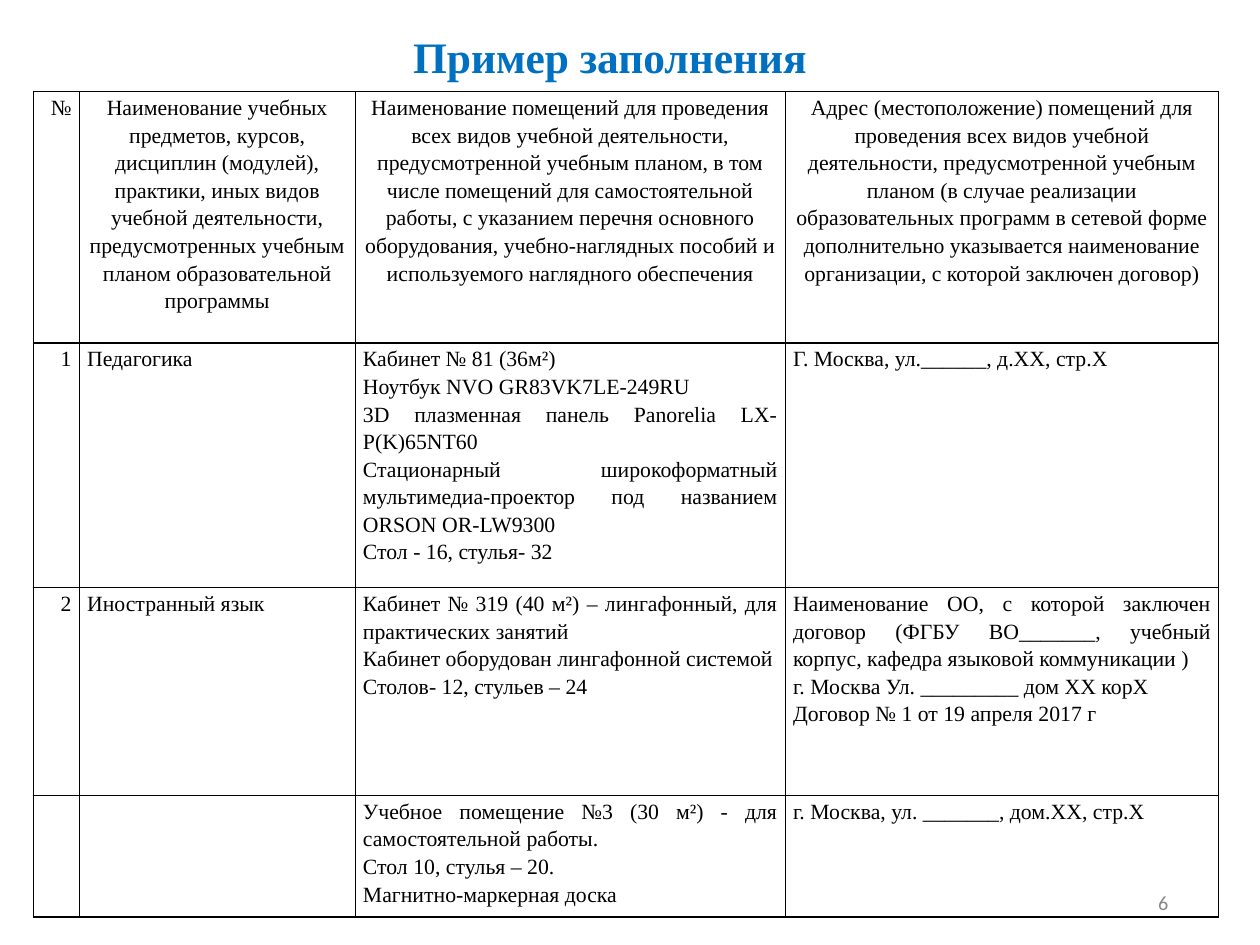
from dataclasses import dataclass
from lxml.etree import SubElement
from pptx import Presentation
from pptx.dml.color import RGBColor as RGB
from pptx.enum.text import MSO_ANCHOR as Anchor, PP_ALIGN as Align
from pptx.oxml.ns import qn
from pptx.util import Inches, Pt


@dataclass(frozen=True)
class Theme:
    serif: str = "Times New Roman"
    sans: str = "Calibri"
    blue: str = "0070C0"
    black: str = "000000"
    gray: str = "888888"
    head: int = 28
    body: int = 14
    small: int = 13
    line: int = 1


HEADS = [
    "№",
    "Наименование учебных предметов, курсов, дисциплин (модулей), практики, "
    "иных видов учебной деятельности, предусмотренных учебным планом "
    "образовательной программы",
    "Наименование помещений для проведения всех видов учебной деятельности, "
    "предусмотренной учебным планом, в том числе помещений для самостоятельной "
    "работы, с указанием перечня основного оборудования, учебно-наглядных "
    "пособий и используемого наглядного обеспечения",
    "Адрес (местоположение) помещений для проведения всех видов учебной "
    "деятельности, предусмотренной учебным планом (в случае реализации "
    "образовательных программ в сетевой форме дополнительно указывается "
    "наименование организации, с которой заключен договор)",
]
ROOMS = [
    ["1", "Педагогика",
     "Кабинет № 81 (36м²)\n"
     "Ноутбук NVO GR83VK7LE-249RU\n"
     "3D плазменная панель Panorelia LX-P(K)65NT60\n"
     "Стационарный широкоформатный мультимедиа-проектор под названием "
     "ORSON OR-LW9300\n"
     "Стол - 16, стулья- 32",
     "Г. Москва, ул.______, д.ХХ, стр.Х"],
    ["2", "Иностранный язык",
     "Кабинет № 319 (40 м²) – лингафонный, для практических занятий\n"
     "Кабинет оборудован лингафонной системой\n"
     "Столов- 12, стульев – 24",
     "Наименование ОО, с которой заключен договор (ФГБУ ВО_______, учебный "
     "корпус, кафедра языковой коммуникации )\n"
     "г. Москва Ул. _________ дом ХХ корХ\n"
     "Договор № 1 от 19 апреля 2017 г"],
    ["", "",
     "Учебное помещение №3 (30 м²) - для самостоятельной работы.\n"
     "Стол 10, стулья – 20.\n"
     "Магнитно-маркерная доска",
     "г. Москва, ул. _______, дом.ХХ, стр.Х"],
]
COLS = [0.41, 2.47, 3.85, 3.88]
ROWS = [2.25, 2.19, 1.86, 1.09]


class Deck:
    def __init__(self, theme, wide, high):
        self.theme = theme
        self.prs = Presentation()
        self.prs.slide_width, self.prs.slide_height = Inches(wide), Inches(high)
        self.slide = self.prs.slides.add_slide(self.prs.slide_layouts[5])

    def style(self, para, name, size, color, align, space=1.0, bold=False):
        para.alignment, para.line_spacing = align, space
        font = para.font
        font.name, font.size, font.bold = name, Pt(size), bold
        font.color.rgb = RGB.from_string(color)

    def frame(self, shape, text, anchor):
        """Fill a shape's text frame and return its first paragraph."""
        frame = shape.text_frame
        frame.text, frame.word_wrap, frame.vertical_anchor = text, True, anchor
        frame.margin_left = frame.margin_right = Inches(0.05)
        frame.margin_top = frame.margin_bottom = Inches(0.05)
        return frame.paragraphs[0]

    def title(self, text, x, y, w, h):
        box = self.slide.shapes.title
        box.left, box.top = Inches(x), Inches(y)
        box.width, box.height = Inches(w), Inches(h)
        para = self.frame(box, text, Anchor.BOTTOM)
        t = self.theme
        self.style(para, t.serif, t.head, t.blue, Align.CENTER, 0.9, True)

    def number(self, text, x, y, w, h):
        box = self.slide.shapes.add_textbox(
            Inches(x), Inches(y), Inches(w), Inches(h))
        para = self.frame(box, text, Anchor.MIDDLE)
        t = self.theme
        self.style(para, t.sans, t.small, t.gray, Align.RIGHT)

    def border(self, cell):
        props = cell._tc.get_or_add_tcPr()
        for side in ("lnL", "lnR", "lnT", "lnB"):
            line = SubElement(props, qn(f"a:{side}"), w=str(Pt(self.theme.line)))
            fill = SubElement(line, qn("a:solidFill"))
            SubElement(fill, qn("a:srgbClr"), val=self.theme.black)

    def cell(self, cell, text, align):
        self.border(cell)
        cell.fill.background()
        cell.margin_left = cell.margin_right = Inches(0.07)
        cell.margin_top, cell.margin_bottom = Inches(0.01), 0
        cell.text = text
        t = self.theme
        for para in cell.text_frame.paragraphs:
            self.style(para, t.serif, t.body, t.black, align, 1.15)

    def table(self, data, x, y, cols, rows):
        grid = self.slide.shapes.add_table(
            len(rows), len(cols), Inches(x), Inches(y),
            Inches(sum(cols)), Inches(sum(rows))).table
        grid.first_row = grid.horz_banding = False
        for col, wide in zip(grid.columns, cols):
            col.width = Inches(wide)
        for row, high in zip(grid.rows, rows):
            row.height = Inches(high)
        for r, line in enumerate(data):
            for c, text in enumerate(line):
                align = (Align.RIGHT if c == 0 else
                         Align.CENTER if r == 0 else Align.JUSTIFY)
                self.cell(grid.cell(r, c), text, align)


def main():
    deck = Deck(Theme(), 11.28, 8.46)
    deck.title("Пример заполнения", 0.55, 0.21, 9.82, 0.58)
    deck.number("6", 7.97, 7.92, 2.54, 0.31)
    deck.table([HEADS, *ROOMS], 0.3, 0.82, COLS, ROWS)
    deck.prs.save("out.pptx")


if __name__ == "__main__":
    main()
